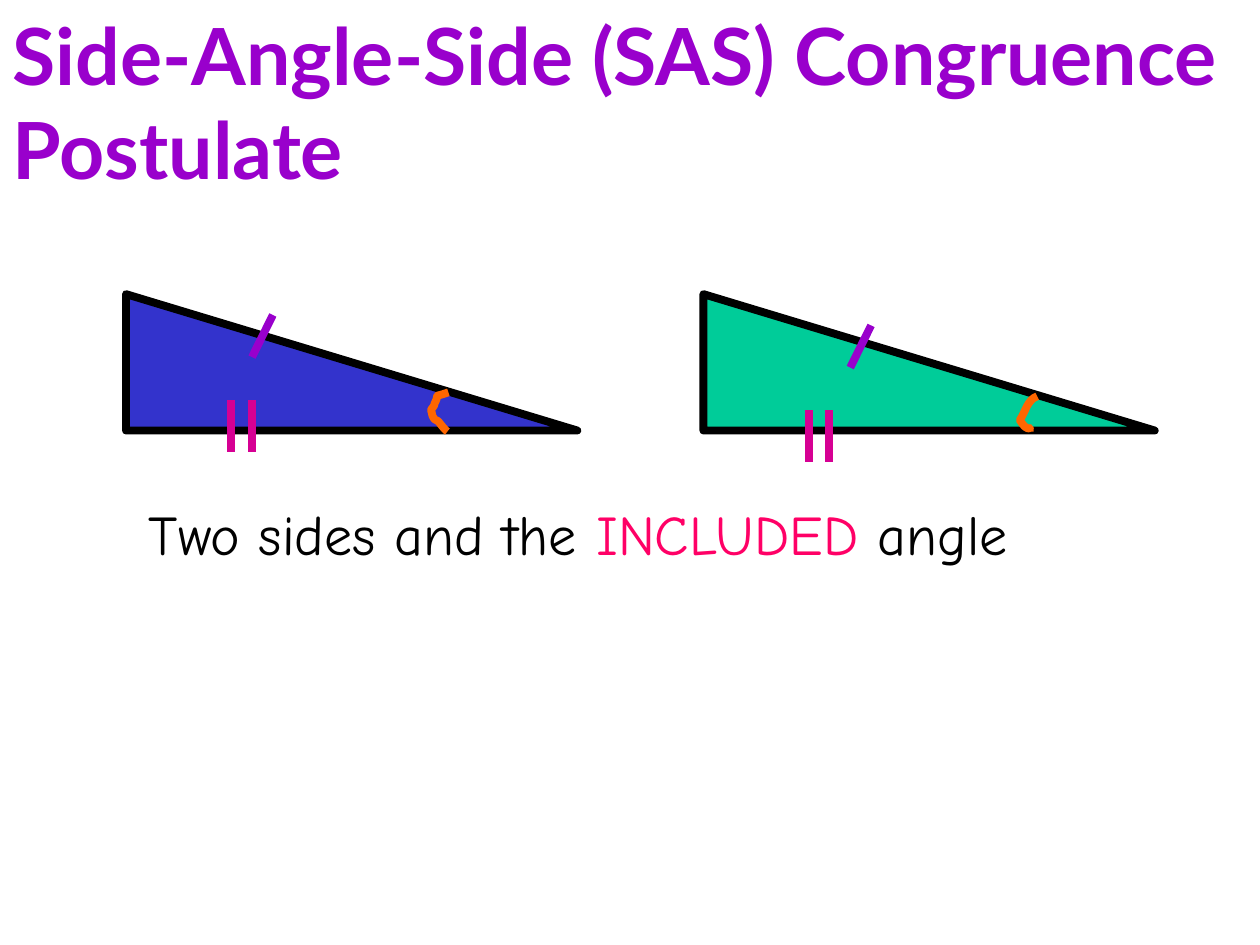
from pptx import Presentation
from pptx.dml.color import RGBColor
from pptx.enum.shapes import MSO_CONNECTOR, MSO_SHAPE
from pptx.enum.text import MSO_ANCHOR, MSO_AUTO_SIZE, PP_ALIGN
from pptx.oxml.ns import qn
from pptx.util import Cm, Pt
from lxml import etree

STRAIGHT = MSO_CONNECTOR.STRAIGHT
RIGHT_TRIANGLE = MSO_SHAPE.RIGHT_TRIANGLE
TOP = MSO_ANCHOR.TOP
NO_FIT = MSO_AUTO_SIZE.NONE
LEFT = PP_ALIGN.LEFT

COLORS = {
    "black": "000000", "purple": "9900CC", "blue": "3333CC", "green": "00CC99",
    "orange": "FF6600", "magenta": "D60093", "pink": "FF0066",
}
WEIGHT = Pt(4.5)
CURVE_STEPS = 8

LEFT_ARC = [
    (6.5, 1.98),
    (6.15, 2.11), (6.35, 1.96), (6.22, 2.21),
    (6.22, 2.26), (6.17, 2.29), (6.15, 2.34),
    (6.17, 2.39), (6.17, 2.46), (6.2, 2.49),
    (6.22, 2.54), (6.27, 2.54), (6.3, 2.57),
    (6.32, 2.59), (6.43, 2.74), (6.48, 2.77),
]
RIGHT_ARC = [
    (6.73, 2.06),
    (6.53, 2.13), (6.5, 2.36), (6.38, 2.54),
    (6.4, 2.57), (6.43, 2.62), (6.48, 2.67),
    (6.6, 2.77), (6.58, 2.62), (6.58, 2.77),
]


def rgb(name):
    return RGBColor.from_string(COLORS[name])


def set_line(sp, color):
    sp.line.color.rgb = rgb(color)
    sp.line.width = WEIGHT


def add_run(p, text, font, size, color="black", bold=False):
    r = p.add_run()
    r.text = text
    r.font.name = font
    r.font.size = Pt(size)
    r.font.bold = bold
    r.font.color.rgb = rgb(color)


def prepare_frame(sp):
    tf = sp.text_frame
    tf.word_wrap = True
    tf.auto_size = NO_FIT
    tf.vertical_anchor = TOP
    p = tf.paragraphs[0]
    p.alignment = LEFT
    return p


def add_mark(s, x1, y1, x2, y2, color):
    line = s.shapes.add_connector(STRAIGHT, Cm(x1), Cm(y1), Cm(x2), Cm(y2))
    set_line(line, color)
    etree.SubElement(line._element.spPr, qn("a:effectLst"))


def curve_points(controls):
    points = [controls[0]]
    for i in range(0, len(controls) - 1, 3):
        a, b, c, d = controls[i:i + 4]
        for step in range(1, CURVE_STEPS + 1):
            t = step / CURVE_STEPS
            u = 1 - t
            points.append(tuple(
                u**3 * a[k] + 3 * u * u * t * b[k] + 3 * u * t * t * c[k] + t**3 * d[k]
                for k in (0, 1)))
    return points


def add_arc(s, left, top, controls):
    points = [(Cm(left + x), Cm(top + y)) for x, y in curve_points(controls)]
    builder = s.shapes.build_freeform(*points[0])
    builder.add_line_segments(points[1:], close=False)
    arc = builder.convert_to_shape()
    arc.shadow.inherit = False
    arc.fill.background()
    set_line(arc, "orange")


def add_triangle(s, left, top, width, height, fill, arc, slash_shift=0, drop=0):
    sp = s.shapes.add_shape(RIGHT_TRIANGLE, Cm(left), Cm(top), Cm(width), Cm(height))
    sp.shadow.inherit = False
    sp.fill.solid()
    sp.fill.fore_color.rgb = rgb(fill)
    set_line(sp, "black")
    add_arc(s, left, top, arc)
    y = top + drop
    x = left + slash_shift
    add_mark(s, x + 2.54, y + 1.27, x + 2.96, y + 0.42, "purple")
    for offset in (2.12, 2.54):
        add_mark(s, left + offset, y + 2.13, left + offset, y + 3.18, "magenta")


def add_title(s, left, top, width, height):
    sp = s.shapes.title
    sp.left, sp.top, sp.width, sp.height = Cm(left), Cm(top), Cm(width), Cm(height)
    p = prepare_frame(sp)
    add_run(p, "Side-Angle-Side (SAS) Congruence Postulate", "Lato", 45, "purple", bold=True)


def add_caption(s, left, top, width, height):
    p = prepare_frame(s.shapes.add_textbox(Cm(left), Cm(top), Cm(width), Cm(height)))
    for text, color in (("Two sides and the ", "black"), ("INCLUDED", "pink"),
                        (" angle", "black")):
        add_run(p, text, "Comic Neue", 32, color)


def main():
    prs = Presentation()
    prs.slide_width, prs.slide_height = Cm(25.4), Cm(19.05)
    s = prs.slides.add_slide(prs.slide_layouts[5])
    add_title(s, 0, 0, 25.4, 4.06)
    add_triangle(s, 2.54, 5.93, 9.1, 2.75, "blue", LEFT_ARC)
    add_triangle(s, 14.18, 5.93, 9.1, 2.75, "green", RIGHT_ARC, slash_shift=0.42, drop=0.21)
    add_caption(s, 2.75, 9.95, 20.53, 1.6)
    prs.save("out.pptx")


if __name__ == "__main__":
    main()
